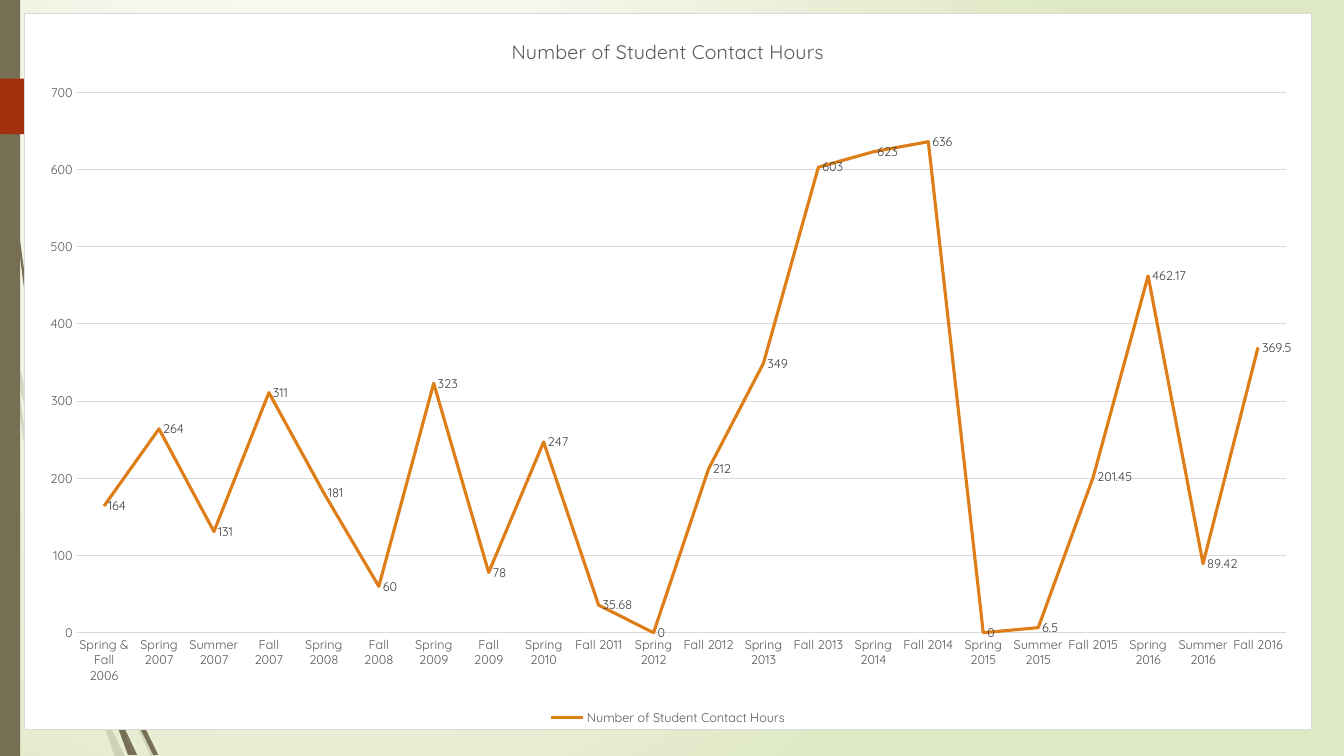
from dataclasses import dataclass

from lxml import etree
from pptx import Presentation
from pptx.chart.data import CategoryChartData
from pptx.dml.color import RGBColor
from pptx.enum.chart import XL_CHART_TYPE, XL_LABEL_POSITION, XL_LEGEND_POSITION, XL_TICK_MARK
from pptx.enum.shapes import MSO_SHAPE
from pptx.oxml import parse_xml
from pptx.oxml.ns import nsdecls, qn
from pptx.util import Emu, Pt

LINE = XL_CHART_TYPE.LINE
RIGHT = XL_LABEL_POSITION.RIGHT
BOTTOM = XL_LEGEND_POSITION.BOTTOM
NO_TICK = XL_TICK_MARK.NONE
RECT = MSO_SHAPE.RECTANGLE

PX = 9144
FONT = "Quicksand"
OLIVE, RED, ORANGE = "766F54", "A53010", "DE7E18"
GRAY, DARK_GRAY, PALE_GRAY = "595959", "404040", "D9D9D9"
TITLE = "Number of Student Contact Hours"

HOURS = {
    "Spring & Fall 2006": 164, "Spring 2007": 264, "Summer 2007": 131, "Fall 2007": 311,
    "Spring 2008": 181, "Fall 2008": 60, "Spring 2009": 323, "Fall 2009": 78,
    "Spring 2010": 247, "Fall 2011": 35.68, "Spring 2012": 0, "Fall 2012": 212,
    "Spring 2013": 349, "Fall 2013": 603, "Spring 2014": 623, "Fall 2014": 636,
    "Spring 2015": 0, "Summer 2015": 6.5, "Fall 2015": 201.45, "Spring 2016": 462.17,
    "Summer 2016": 89.42, "Fall 2016": 369.5,
}


@dataclass
class Outline:
    points: list[tuple[int, int]]
    color: str = OLIVE
    opacity: int = 100


WISPS = [
    Outline([(58, 522), (84, 599), (85, 586), (62, 520), (14, 345), (17, 376)], opacity=20),
    Outline([(92, 607), (88, 596), (88, 610), (123, 694), (150, 751), (155, 751), (127, 692)],
            opacity=20),
    Outline([(119, 751), (124, 751), (105, 711)], opacity=20),
    Outline([(93, 683), (70, 619), (31, 469), (17, 376), (11, 350), (28, 470), (65, 621),
             (92, 693), (101, 714), (99, 707)], opacity=20),
    Outline([(101, 714), (114, 751), (119, 751)], opacity=20),
    Outline([(96, 692), (93, 683), (99, 707), (101, 714), (119, 751), (105, 711)], opacity=20),
    Outline([(7, 110), (17, 233), (33, 355), (56, 477), (57, 481), (55, 457), (55, 453),
             (36, 355), (19, 232), (8, 109), (5, 48), (4, 0), (3, 0), (4, 48)]),
    Outline([(113, 649), (110, 641), (111, 656), (132, 708), (152, 749), (157, 749), (136, 706)]),
    Outline([(133, 749), (136, 749), (122, 719)]),
    Outline([(117, 722), (127, 749), (131, 749)]),
    Outline([(116, 706), (110, 691), (116, 717), (117, 722), (130, 749), (133, 749), (122, 719)]),
]
TAB = Outline([(173, 108), (148, 133), (146, 134), (136, 134), (0, 133), (0, 78),
               (146, 78), (148, 79), (173, 104)], RED)


def px(n: int) -> Emu:
    return Emu(n * PX)


def rgb(color: str) -> RGBColor:
    return RGBColor.from_string(color)


def paint(sp, color: str, opacity: int = 100) -> None:
    sp.shadow.inherit = False
    sp.fill.solid()
    sp.fill.fore_color.rgb = rgb(color)
    sp.line.fill.background()
    if opacity < 100:
        clr = sp._element.spPr.find(qn("a:solidFill"))[0]
        etree.SubElement(clr, qn("a:alpha")).set("val", str(opacity * 1000))


def draw_outline(s, outline: Outline) -> None:
    builder = s.shapes.build_freeform(*outline.points[0], scale=PX)
    builder.add_line_segments(outline.points[1:], close=True)
    paint(builder.convert_to_shape(), outline.color, outline.opacity)


def set_background(s) -> None:
    fill = s.background.fill
    fill.gradient()
    for stop, color, position in zip(fill.gradient_stops, ("FFFFFF", "DFE8C4"), (0, 1)):
        stop.color.rgb = rgb(color)
        stop.position = position
    grad = s._element.find(".//" + qn("a:gradFill"))
    grad.replace(grad.find(qn("a:lin")), parse_xml(
        f'<a:path {nsdecls("a")} path="circle">'
        '<a:fillToRect l="50000" t="50000" r="100000" b="100000"/></a:path>'))


def set_font(font, size: int, color: str) -> None:
    font.name = FONT
    font.size = Pt(size)
    font.bold = False
    font.color.rgb = rgb(color)


def set_line(line, color: str, width: float) -> None:
    line.color.rgb = rgb(color)
    line.width = Pt(width)


def add_text(tf, text: str, *, size: int, color: str) -> None:
    r = tf.paragraphs[0].add_run()
    r.text = text
    set_font(r.font, size, color)


def frame_chart(chart) -> None:
    space = chart._chartSpace
    if space.find(qn("c:roundedCorners")) is None:
        space.find(qn("c:date1904")).addnext(
            parse_xml(f'<c:roundedCorners {nsdecls("c")} val="0"/>'))
    space.find(qn("c:chart")).addnext(parse_xml(
        f'<c:spPr {nsdecls("c", "a")}><a:solidFill><a:srgbClr val="FFFFFF"/></a:solidFill>'
        f'<a:ln w="9525"><a:solidFill><a:srgbClr val="{PALE_GRAY}"/></a:solidFill></a:ln></c:spPr>'))


def add_hours_chart(s) -> None:
    data = CategoryChartData()
    data.categories = list(HOURS)
    data.add_series(TITLE, list(HOURS.values()))
    chart = s.shapes.add_chart(LINE, px(24), px(13), px(1277), px(711), data).chart
    set_font(chart.font, 10, "000000")
    frame_chart(chart)

    chart.has_title = True
    add_text(chart.chart_title.text_frame, TITLE, size=14, color=GRAY)
    chart.has_legend = True
    chart.legend.position = BOTTOM
    chart.legend.include_in_layout = False
    set_font(chart.legend.font, 9, GRAY)

    for axis in (chart.category_axis, chart.value_axis):
        axis.major_tick_mark = axis.minor_tick_mark = NO_TICK
        set_font(axis.tick_labels.font, 9, GRAY)
    set_line(chart.category_axis.format.line, PALE_GRAY, 0.75)
    hours = chart.value_axis
    hours.format.line.fill.background()
    hours.minimum_scale, hours.maximum_scale, hours.major_unit = 0, 700, 100
    set_line(hours.major_gridlines.format.line, PALE_GRAY, 0.75)

    plot = chart.plots[0]
    plot.vary_by_categories = False
    series = plot.series[0]
    series.smooth = False
    set_line(series.format.line, ORANGE, 2.25)
    labels = series.data_labels
    labels.show_value = True
    labels.position = RIGHT
    set_font(labels.font, 9, DARK_GRAY)


def main() -> None:
    prs = Presentation()
    prs.slide_width, prs.slide_height = px(1333), px(750)
    s = prs.slides.add_slide(prs.slide_layouts[6])
    set_background(s)
    for wisp in WISPS:
        draw_outline(s, wisp)
    paint(s.shapes.add_shape(RECT, 0, 0, px(20), px(750)), OLIVE)
    draw_outline(s, TAB)
    add_hours_chart(s)
    prs.save("out.pptx")


if __name__ == "__main__":
    main()
